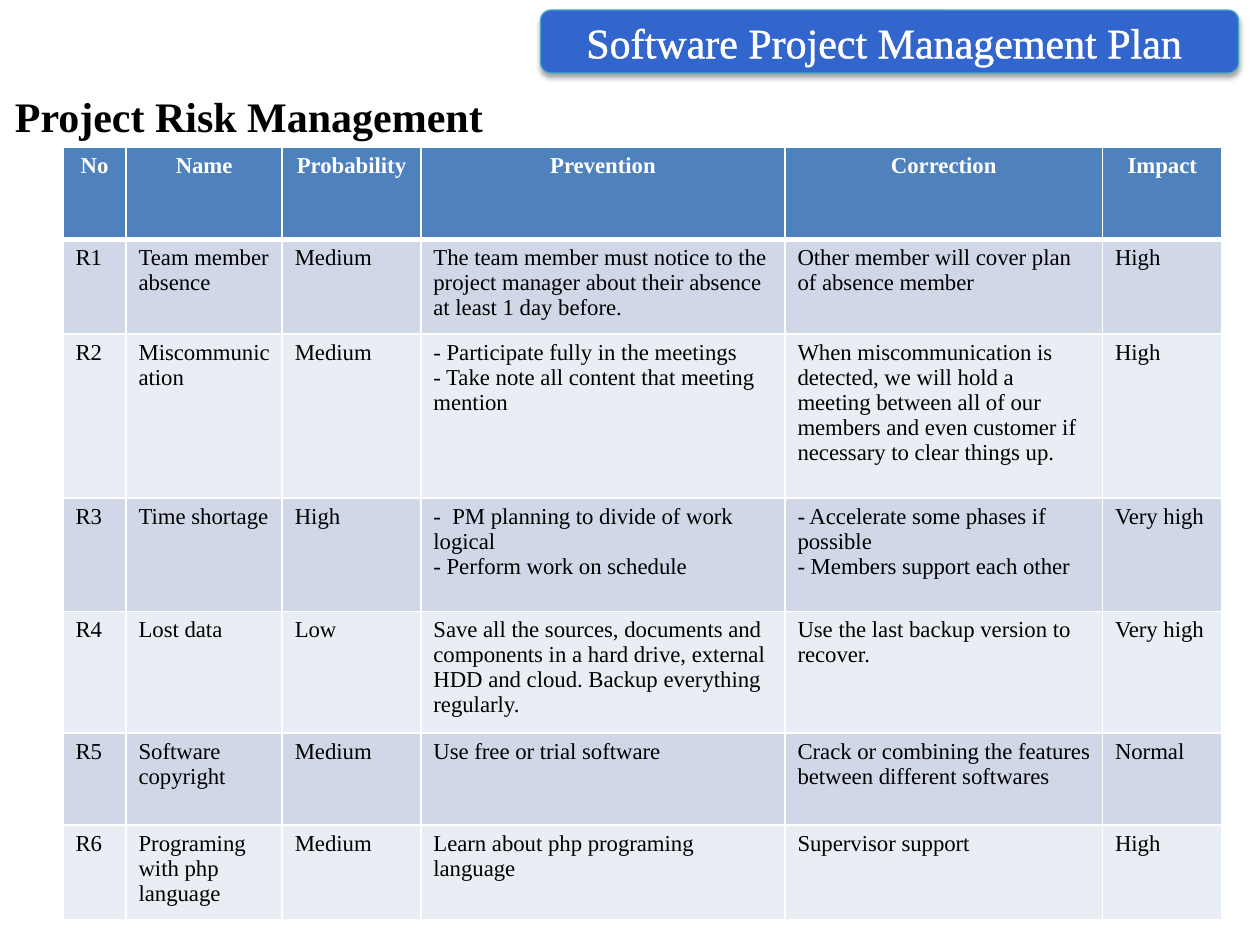
import dataclasses

import pptx
import pptx.dml.color
import pptx.enum.shapes
import pptx.enum.text
import pptx.oxml
import pptx.oxml.ns
import pptx.util
from pptx.util import Inches

ALIGN = pptx.enum.text.PP_ALIGN


@dataclasses.dataclass(frozen=True)
class Theme:
    font: str = "Times New Roman"
    title_size: int = 24
    table_size: int = 13
    dark: str = "000000"
    light: str = "FFFFFF"
    banner: str = "3366CC"
    banner_line: str = "46AAC5"
    header: str = "4F81BD"
    bands: tuple = ("D0D8E8", "E9EDF4")


THEME = Theme()

COLUMN_WIDTHS = [0.5, 1.24, 1.1, 2.89, 2.52, 0.95]
ROW_HEIGHTS = [0.73, 0.73, 1.3, 0.9, 0.9, 0.73, 0.73]
HEADINGS = ["No", "Name", "Probability", "Prevention", "Correction", "Impact"]
RISKS = [
    ["R1", "Team member absence", "Medium",
     "The team member must notice to the project manager about their absence "
     "at least 1 day before.",
     "Other member will cover plan of absence member", "High"],
    ["R2", "Miscommunication", "Medium",
     "- Participate fully in the meetings\n"
     "- Take note all content that meeting mention",
     "When miscommunication is detected, we will hold a meeting between all of our "
     "members and even customer if necessary to clear things up.", "High"],
    ["R3", "Time shortage", "High",
     "-  PM planning to divide of work logical\n- Perform work on schedule",
     "- Accelerate some phases if possible\n- Members support each other", "Very high"],
    ["R4", "Lost data", "Low",
     "Save all the sources, documents and components in a hard drive, external HDD "
     "and cloud. Backup everything regularly.",
     "Use the last backup version to recover.", "Very high"],
    ["R5", "Software copyright", "Medium", "Use free or trial software",
     "Crack or combining the features between different softwares", "Normal"],
    ["R6", "Programing with php language", "Medium",
     "Learn about php programing language", "Supervisor support", "High"],
]


def rgb(color):
    return pptx.dml.color.RGBColor.from_string(color)


def fragment(tag, attributes, inner=""):
    """Return a DrawingML element."""
    ns = pptx.oxml.ns.nsdecls("a")
    return pptx.oxml.parse_xml(f"<a:{tag} {ns} {attributes}>{inner}</a:{tag}>")


def outline(tag, color, points):
    fill = f'<a:solidFill><a:srgbClr val="{color}"/></a:solidFill>'
    return fragment(tag, f'w="{int(pptx.util.Pt(points))}"', fill)


def write(tf, text, size, color, bold=False, align=ALIGN.LEFT):
    """Fill a text frame, one paragraph a line, and return the last run."""
    tf.word_wrap = True
    for i, line in enumerate(text.split("\n")):
        p = tf.add_paragraph() if i else tf.paragraphs[0]
        p.alignment = align
        r = p.add_run()
        r.text = line
        r.font.name = THEME.font
        r.font.size = pptx.util.Pt(size)
        r.font.bold = bold
        r.font.color.rgb = rgb(color)
    return r


def add_title(s, left, top, width, height):
    box = s.shapes.add_textbox(left, top, width, height)
    write(box.text_frame, "Project Risk Management", THEME.title_size, THEME.dark, bold=True)


def add_banner(s, left, top, width, height):
    sp = s.shapes.add_shape(pptx.enum.shapes.MSO_SHAPE.ROUNDED_RECTANGLE,
                            left, top, width, height)
    sp.fill.solid()
    sp.fill.fore_color.rgb = rgb(THEME.banner)
    sp.line.color.rgb = rgb(THEME.banner_line)
    sp.line.width = pptx.util.Pt(0.75)
    sp.shadow.inherit = False
    effects = sp.element.spPr.find(pptx.oxml.ns.qn("a:effectLst"))
    effects.append(fragment(
        "outerShdw",
        f'blurRad="{int(pptx.util.Pt(3.1))}" dist="{int(pptx.util.Pt(1.8))}" '
        'dir="5400000" rotWithShape="0"',
        f'<a:srgbClr val="{THEME.dark}"><a:alpha val="35000"/></a:srgbClr>'))
    sp.text_frame.vertical_anchor = pptx.enum.text.MSO_ANCHOR.MIDDLE
    r = write(sp.text_frame, "Software Project Management Plan ",
              THEME.title_size, THEME.light, align=ALIGN.CENTER)
    r.font._element.insert(0, outline("ln", THEME.light, 1.45))


def style_cell(cell, fill, bottom):
    """Set the fill and the white borders; bottom is the lower border in points."""
    cell.fill.solid()
    cell.fill.fore_color.rgb = rgb(fill)
    borders = {"lnL": 1, "lnR": 1, "lnT": 1, "lnB": bottom}
    for i, (side, points) in enumerate(borders.items()):
        cell._tc.get_or_add_tcPr().insert(i, outline(side, THEME.light, points))


def add_risk_table(s, left, top, width, height):
    rows = [HEADINGS] + RISKS
    table = s.shapes.add_table(len(rows), len(HEADINGS), left, top, width, height).table
    for column, inches in zip(table.columns, COLUMN_WIDTHS):
        column.width = Inches(inches)
    for row, inches in zip(table.rows, ROW_HEIGHTS):
        row.height = Inches(inches)
    for i, texts in enumerate(rows):
        for j, text in enumerate(texts):
            cell = table.cell(i, j)
            if i == 0:
                style_cell(cell, THEME.header, bottom=3)
                write(cell.text_frame, text, THEME.table_size, THEME.light,
                      bold=True, align=ALIGN.CENTER)
            else:
                style_cell(cell, THEME.bands[(i - 1) % 2], bottom=1)
                write(cell.text_frame, text, THEME.table_size, THEME.dark)
    for j in range(len(HEADINGS)):
        top_border = table.cell(1, j)._tc.tcPr.find(pptx.oxml.ns.qn("a:lnT"))
        top_border.set("w", str(int(pptx.util.Pt(3))))


def main():
    prs = pptx.Presentation()
    prs.slide_width, prs.slide_height = Inches(10), Inches(7.5)
    s = prs.slides.add_slide(prs.slide_layouts[6])
    add_title(s, Inches(0.02), Inches(0.67), Inches(4.75), Inches(0.5))
    add_risk_table(s, Inches(0.5), Inches(1.17), Inches(9.2), Inches(6.02))
    add_banner(s, Inches(4.29), Inches(0.08), Inches(5.54), Inches(0.5))
    prs.save("out.pptx")


if __name__ == "__main__":
    main()
